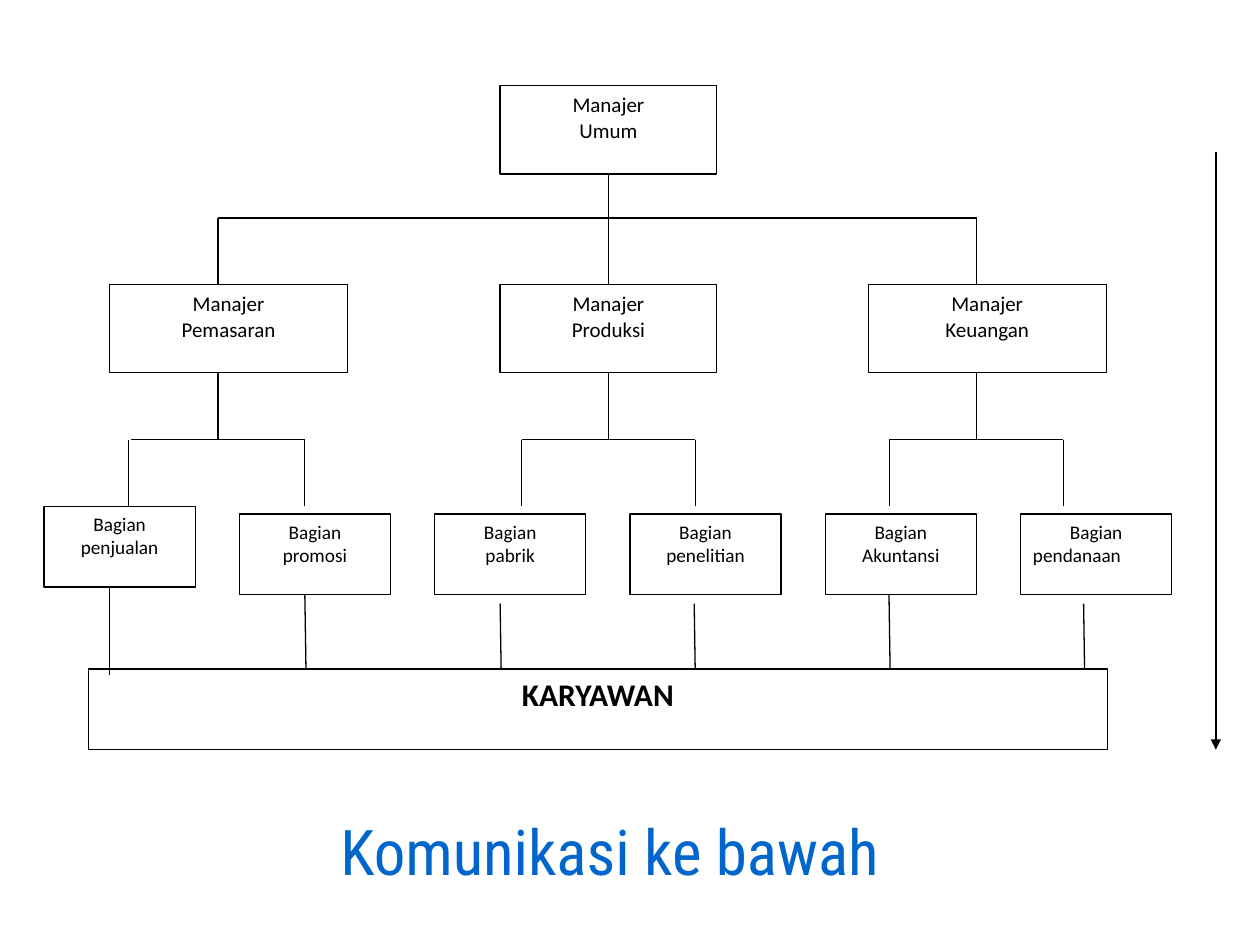
import typing
from dataclasses import dataclass

import pptx
import pptx.dml.color
import pptx.enum.shapes
import pptx.enum.text
import pptx.oxml
import pptx.util

Pt = pptx.util.Pt
Align = pptx.enum.text.PP_ALIGN
Anchor = pptx.enum.text.MSO_ANCHOR

BLACK, WHITE, BLUE = "000000", "FFFFFF", "0066CC"
TOP, BOTTOM = 0, 2  # connection sites of a rectangle
LINE_WIDTH = 0.75

MANAGER_TOP, MANAGER_HEIGHT = 162.7, 50.4
MANAGER_BOTTOM = MANAGER_TOP + MANAGER_HEIGHT
SECTION_TOP, SECTION_HEIGHT = 293.8, 46.1
SECTION_LEFT, SECTION_WIDTH, SECTION_STEP = 25.2, 86.4, 111.6
FIRST_SECTION_TOP = 289.4
STAFF_TOP = 382.3
UPPER_BUS, LOWER_BUS = 124.6, 251.3


@dataclass
class Unit:
    label: str
    left: float
    top: float
    width: float
    height: float
    size: float = 12
    bold: bool = False


@dataclass
class Branch:
    """The lines from one manager down to a pair of sections."""
    trunk: float
    bus_left: float
    left_drop: float
    right_drop: float


def color(value: str) -> pptx.dml.color.RGBColor:
    return pptx.dml.color.RGBColor.from_string(value)


def format_text(frame, font: str, size: float, ink: str, bold: bool = False) -> None:
    for para in frame.paragraphs:
        para.alignment = Align.CENTER
        for span in para.runs:
            span.font.name = font
            span.font.size = Pt(size)
            span.font.bold = bold
            span.font.color.rgb = color(ink)


def add_unit(page, unit: Unit):
    box = page.shapes.add_shape(
        pptx.enum.shapes.MSO_SHAPE.RECTANGLE,
        Pt(unit.left), Pt(unit.top), Pt(unit.width), Pt(unit.height))
    box.shadow.inherit = False
    box.fill.solid()
    box.fill.fore_color.rgb = color(WHITE)
    box.line.color.rgb = color(BLACK)
    box.line.width = Pt(LINE_WIDTH)
    box.text_frame.vertical_anchor = Anchor.TOP
    box.text_frame.text = unit.label
    format_text(box.text_frame, "Calibri", unit.size, BLACK, unit.bold)
    return box


def add_line(page, x1: float, y1: float, x2: float, y2: float):
    line = page.shapes.add_connector(
        pptx.enum.shapes.MSO_CONNECTOR.STRAIGHT, Pt(x1), Pt(y1), Pt(x2), Pt(y2))
    line.line.color.rgb = color(BLACK)
    line.line.width = Pt(LINE_WIDTH)
    line._element.spPr.append(pptx.oxml.parse_xml(
        '<a:effectLst xmlns:a="http://schemas.openxmlformats.org/drawingml/2006/main"/>'))
    return line


def add_arrow(page, x: float, top: float, bottom: float) -> None:
    arrow = add_line(page, x, top, x, bottom)
    arrow.line._get_or_add_ln().append(pptx.oxml.parse_xml(
        '<a:tailEnd xmlns:a="http://schemas.openxmlformats.org/drawingml/2006/main"'
        ' type="triangle"/>'))


def add_branch(page, branch: Branch) -> None:
    add_line(page, branch.bus_left, LOWER_BUS, branch.right_drop, LOWER_BUS)
    for x in (branch.left_drop, branch.right_drop):
        add_line(page, x, LOWER_BUS, x, FIRST_SECTION_TOP)


def add_sections(page, names: typing.Sequence[str]) -> list:
    boxes = []
    for index, name in enumerate(names):
        top = SECTION_TOP if index else FIRST_SECTION_TOP
        boxes.append(add_unit(page, Unit(
            f"Bagian\n{name}", SECTION_LEFT + index * SECTION_STEP, top,
            SECTION_WIDTH, SECTION_HEIGHT, 11)))
    return boxes


def add_title(page, label: str) -> None:
    title = page.shapes.title
    title.left, title.top, title.width, title.height = Pt(76.3), Pt(457.2), Pt(544.3), Pt(56.9)
    frame = title.text_frame
    frame.text = label
    frame.word_wrap = False
    frame.vertical_anchor = Anchor.MIDDLE
    format_text(frame, "Roboto Condensed", 36, BLUE)


def main() -> None:
    deck = pptx.Presentation()
    deck.slide_width, deck.slide_height = Pt(720), Pt(540)
    page = deck.slides.add_slide(deck.slide_layouts[5])
    add_title(page, "Komunikasi ke bawah")

    general = add_unit(page, Unit("Manajer\nUmum", 285.8, 49, 123.8, MANAGER_HEIGHT))
    marketing, production, finance = [
        add_unit(page, Unit(f"Manajer\n{name}", left, MANAGER_TOP, width, MANAGER_HEIGHT))
        for name, left, width in (("Pemasaran", 62.6, 136.1),
                                  ("Produksi", 285.8, 123.8),
                                  ("Keuangan", 496.1, 136.1))]
    sections = add_sections(
        page, ("penjualan", "promosi", "pabrik", "penelitian", "Akuntansi", "pendanaan"))
    sections[-1].text_frame.paragraphs[1].alignment = Align.LEFT

    branches = (Branch(124.6, 74.9, 73.4, 174.2),
                Branch(347.7, 298.1, 298.1, 397.4),
                Branch(558, 508.3, 508.3, 607.7))
    left, middle, right = (branch.trunk for branch in branches)

    spine = add_line(page, middle, 99.4, middle, MANAGER_TOP)
    spine.begin_connect(general, BOTTOM)
    spine.end_connect(production, TOP)
    add_line(page, left, UPPER_BUS, right, UPPER_BUS)
    for x in (left, right):
        add_line(page, x, UPPER_BUS, x, MANAGER_TOP)

    for branch in branches:
        trunk = add_line(page, branch.trunk, MANAGER_BOTTOM, branch.trunk, LOWER_BUS)
        if branch.trunk == middle:
            trunk.begin_connect(production, BOTTOM)
        add_branch(page, branch)

    # The staff box covers the lower ends of these lines.
    for x, top in ((174.2, 339.8), (285.8, 344.9), (396.7, 344.9),
                   (508, 339.8), (619.2, 344.9)):
        add_line(page, x, top, x + 0.7, top + SECTION_HEIGHT)
    add_unit(page, Unit("KARYAWAN", 50.4, STAFF_TOP, 582.5, SECTION_HEIGHT, 18, True))
    add_line(page, 62.6, FIRST_SECTION_TOP + SECTION_HEIGHT, 62.6, 385.9)
    add_arrow(page, 694.8, 87.1, 428.4)

    deck.save("out.pptx")


if __name__ == "__main__":
    main()
